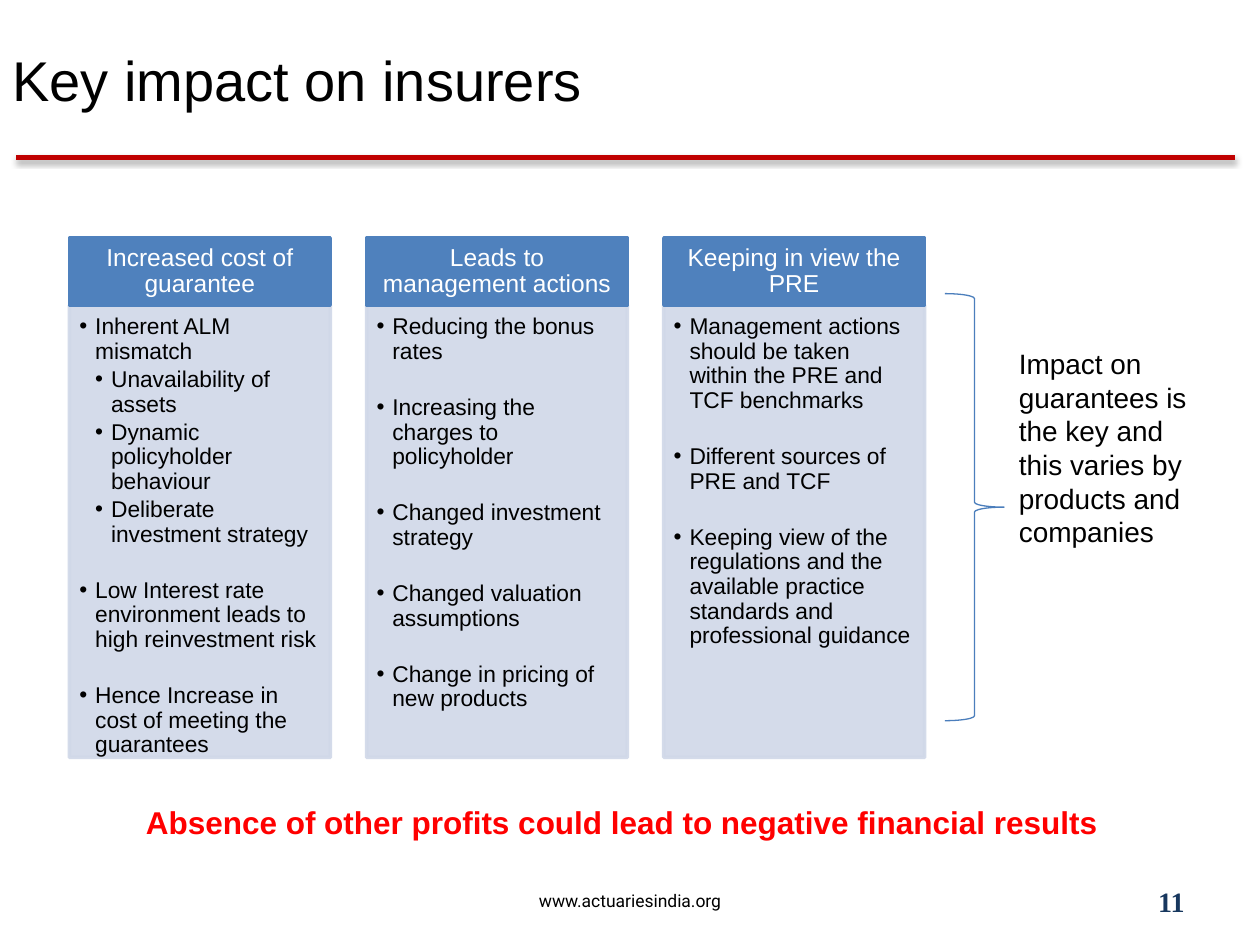
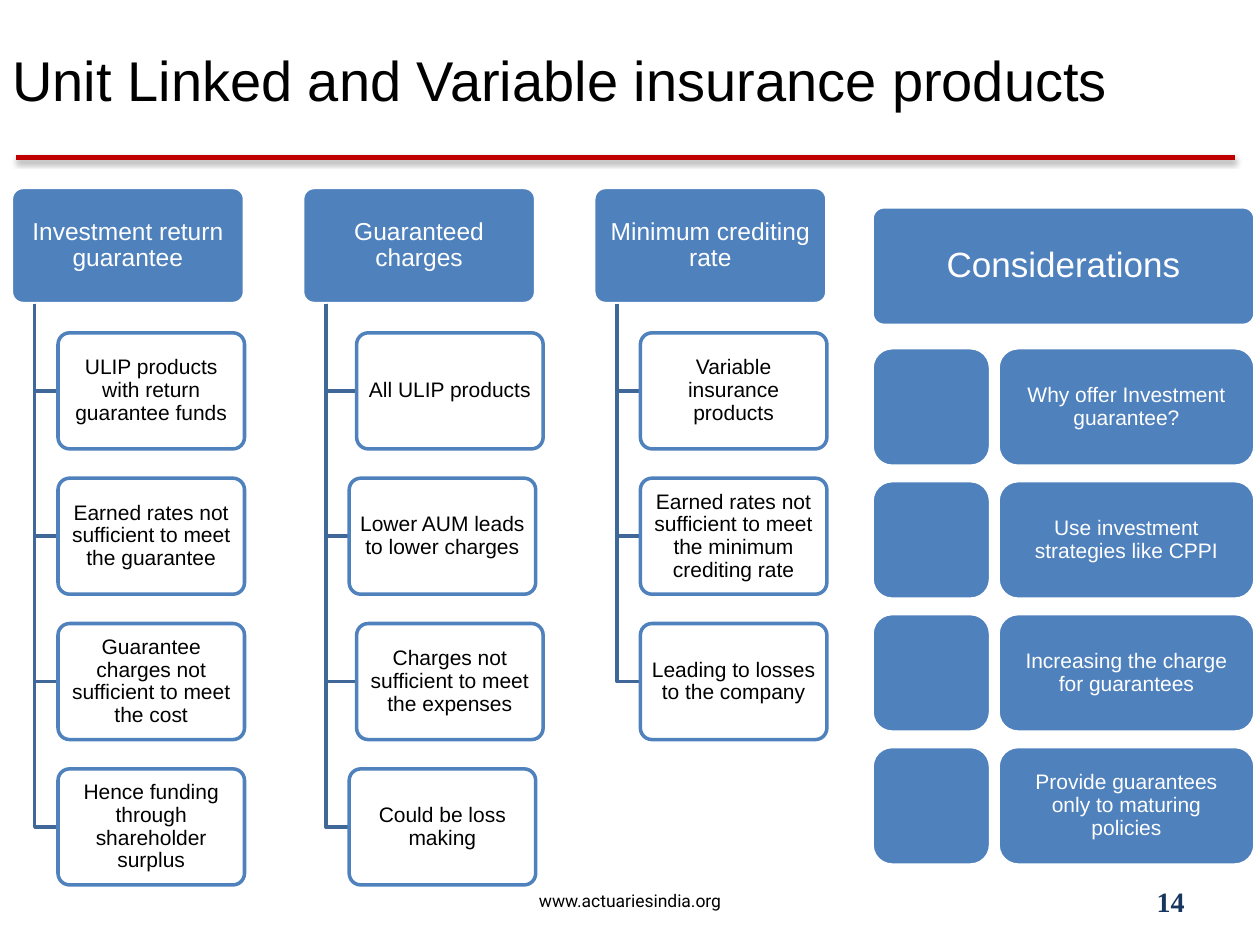
from dataclasses import dataclass
from typing import NamedTuple

from lxml.etree import SubElement
from pptx import Presentation
from pptx.dml.color import RGBColor
from pptx.enum.shapes import MSO_CONNECTOR, MSO_SHAPE
from pptx.enum.text import MSO_ANCHOR, MSO_AUTO_SIZE, PP_ALIGN
from pptx.oxml.ns import qn
from pptx.util import Cm, Pt


@dataclass(frozen=True)
class Theme:
    font: str = "Arial"
    footer_font: str = "Roboto"
    number_font: str = "Times New Roman"
    black: str = "000000"
    white: str = "FFFFFF"
    blue: str = "4F81BD"
    pale_blue: str = "D0D8E8"
    branch_blue: str = "3F6797"
    brace_blue: str = "4B7EBC"
    navy: str = "17375E"
    rule_red: str = "C00000"
    alert_red: str = "FF0000"
    title_size: float = 32
    panel_size: float = 20
    message_size: float = 18
    note_size: float = 16
    head_size: float = 14
    list_size: float = 13
    node_size: float = 12
    footer_size: float = 10


THEME = Theme()
COMPARISON_LAYOUT, TITLE_ONLY_LAYOUT = 4, 5
WIDE_INSETS = (0.25, 0.13, 0.25, 0.13)


class Box(NamedTuple):
    """A rectangle in centimetres."""
    left: float
    top: float
    width: float
    height: float

    def lengths(self):
        return [Cm(value) for value in self]


INSURER_COLUMNS = [
    ("Increased cost of guarantee", [
        (0, "Inherent ALM mismatch"),
        (1, "Unavailability of assets"),
        (1, "Dynamic policyholder behaviour"),
        (1, "Deliberate investment strategy"),
        (0, "Low Interest rate environment leads to high reinvestment risk"),
        (0, "Hence Increase in cost of meeting the guarantees")]),
    ("Leads to management actions", [
        (0, "Reducing the bonus rates"),
        (0, "Increasing the charges to policyholder"),
        (0, "Changed investment strategy"),
        (0, "Changed valuation assumptions"),
        (0, "Change in pricing of new products")]),
    ("Keeping in view the PRE", [
        (0, "Management actions should be taken within the PRE and TCF benchmarks"),
        (0, "Different sources of PRE and TCF"),
        (0, "Keeping view of the regulations and the available practice "
            "standards and professional guidance")]),
]

# Heading, extra indent of every other node, node texts
PRODUCT_TREES = [
    ("Investment return guarantee", 0, [
        "ULIP products with return guarantee funds",
        "Earned rates not sufficient to meet the guarantee",
        "Guarantee charges not sufficient to meet the cost",
        "Hence funding through shareholder surplus"]),
    ("Guaranteed charges", 0.15, [
        "All ULIP products",
        "Lower AUM leads to lower charges",
        "Charges not sufficient to meet the expenses",
        "Could be loss making"]),
    ("Minimum crediting rate", 0, [
        "Variable insurance products",
        "Earned rates not sufficient to meet the minimum crediting rate",
        "Leading to losses to the company"]),
]

CONSIDERATIONS = [
    "Why offer Investment guarantee?",
    "Use investment strategies like CPPI",
    "Increasing the charge for guarantees",
    "Provide guarantees only to maturing policies",
]


def rgb(color):
    return RGBColor.from_string(color)


def style_runs(para, size, color, font=THEME.font, bold=False):
    for span in para.runs:
        span.font.size = Pt(size)
        span.font.name = font
        span.font.bold = bold
        span.font.color.rgb = rgb(color)


def set_frame(frame, anchor, insets=WIDE_INSETS):
    frame.word_wrap = True
    frame.auto_size = MSO_AUTO_SIZE.NONE
    frame.vertical_anchor = anchor
    (frame.margin_left, frame.margin_top,
     frame.margin_right, frame.margin_bottom) = [Cm(inset) for inset in insets]


def set_line(shape, color, width):
    shape.line.color.rgb = rgb(color)
    shape.line.width = Pt(width)


def move(shape, box):
    shape.left, shape.top, shape.width, shape.height = box.lengths()


def make_translucent(shape, percent):
    for color in shape._element.spPr.iter(qn("a:srgbClr")):
        SubElement(color, qn("a:alpha"), val=str(percent * 1000))


def add_label(page, box, text, size, color, anchor=MSO_ANCHOR.MIDDLE,
              align=PP_ALIGN.LEFT, font=THEME.font, bold=False):
    label = page.shapes.add_textbox(*box.lengths())
    set_frame(label.text_frame, anchor)
    label.text_frame.text = text
    para = label.text_frame.paragraphs[0]
    para.alignment = align
    style_runs(para, size, color, font, bold)


def add_tile(page, box, text="", size=THEME.node_size, color=THEME.white,
             fill=THEME.blue, line=THEME.white, rounding=0.1,
             insets=(0.08, 0.05, 0.08, 0.05)):
    """Add a filled tile with centred text; a rounding of 0 gives square corners."""
    kind = MSO_SHAPE.ROUNDED_RECTANGLE if rounding else MSO_SHAPE.RECTANGLE
    tile = page.shapes.add_shape(kind, *box.lengths())
    if rounding:
        tile.adjustments[0] = rounding
    tile.shadow.inherit = False
    tile.fill.solid()
    tile.fill.fore_color.rgb = rgb(fill)
    set_line(tile, line, 2)
    if text:
        set_frame(tile.text_frame, MSO_ANCHOR.MIDDLE, insets)
        tile.text_frame.text = text
        para = tile.text_frame.paragraphs[0]
        para.alignment = PP_ALIGN.CENTER
        para.line_spacing = 0.9
        style_runs(para, size, color)


def add_title_rule(page):
    rule = page.shapes.add_connector(
        MSO_CONNECTOR.STRAIGHT, Cm(0.33), Cm(3.18), Cm(24.89), Cm(3.18))
    set_line(rule, THEME.rule_red, 3)
    effects = SubElement(rule._element.spPr, qn("a:effectLst"))
    shadow = SubElement(effects, qn("a:outerShdw"), blurRad="40000",
                        dist="20000", dir="5400000", rotWithShape="0")
    color = SubElement(shadow, qn("a:srgbClr"), val=THEME.black)
    SubElement(color, qn("a:alpha"), val="38000")


def add_page(deck, layout, title, number):
    """Add a slide with the title, rule, footer and number that all slides share."""
    page = deck.slides.add_slide(deck.slide_layouts[layout])
    heading = page.shapes.title
    move(heading, Box(0, 0, 22.86, 3.18))
    set_frame(heading.text_frame, MSO_ANCHOR.MIDDLE)
    heading.text_frame.text = title
    para = heading.text_frame.paragraphs[0]
    para.alignment = PP_ALIGN.LEFT
    style_runs(para, THEME.title_size, THEME.black)
    add_title_rule(page)
    add_label(page, Box(0, 17.65, 25.4, 1.02), "www.actuariesindia.org",
              THEME.footer_size, THEME.black, align=PP_ALIGN.CENTER,
              font=THEME.footer_font)
    add_label(page, Box(18.21, 17.65, 5.92, 1.02), str(number), THEME.note_size,
              THEME.navy, align=PP_ALIGN.RIGHT, font=THEME.number_font, bold=True)
    return page


def fill_list(body, box, items):
    """Turn a body placeholder into a pale panel with a two-level bullet list."""
    move(body, box)
    body.fill.solid()
    body.fill.fore_color.rgb = rgb(THEME.pale_blue)
    set_line(body, THEME.pale_blue, 2)
    make_translucent(body, 90)
    set_frame(body.text_frame, MSO_ANCHOR.TOP, (0.2, 0.2, 0.25, 0.28))
    body.text_frame.text = "\n".join(text for _, text in items)
    next_levels = [level for level, _ in items[1:]] + [1]
    for para, (level, _), next_level in zip(body.text_frame.paragraphs, items, next_levels):
        para.level = level
        properties = para._p.get_or_add_pPr()
        properties.set("marL", str(Cm(0.32 * (level + 1))))
        properties.set("indent", str(-Cm(0.32)))
        SubElement(properties, qn("a:buChar"), char="•")
        para.alignment = PP_ALIGN.LEFT
        para.line_spacing = 0.9
        para.space_before = Pt(0)
        para.space_after = Pt(2 if next_level else 18)
        style_runs(para, THEME.list_size, THEME.black)


def add_insurer_column(page, body, box, heading, items):
    head_height = 1.35
    add_tile(page, box._replace(height=head_height), heading, THEME.head_size,
             line=THEME.blue, rounding=0, insets=(0.28, 0.16, 0.28, 0.16))
    fill_list(body, Box(box.left, box.top + head_height, box.width,
                        box.height - head_height), items)


def add_brace_note(page, box, text):
    brace_width = 1.19
    brace = page.shapes.add_shape(
        MSO_SHAPE.RIGHT_BRACE, *box._replace(width=brace_width).lengths())
    brace.shadow.inherit = False
    brace.fill.background()
    set_line(brace, THEME.brace_blue, 0.75)
    note = Box(box.left + brace_width + 0.05, box.top + 0.94,
               box.width - brace_width - 0.05, 4.37)
    add_label(page, note, text, THEME.note_size, THEME.black, MSO_ANCHOR.TOP)


def fill_message(body, box, text):
    move(body, box)
    set_frame(body.text_frame, MSO_ANCHOR.TOP)
    body.text_frame.text = text
    para = body.text_frame.paragraphs[0]
    para.space_before = Pt(0)
    style_runs(para, THEME.message_size, THEME.alert_red, bold=True)


def build_insurers_slide(deck):
    page = add_page(deck, COMPARISON_LAYOUT, "Key impact on insurers", 11)
    message, *bodies = [holder for holder in page.placeholders
                        if holder.placeholder_format.idx]
    for index, (body, column) in enumerate(zip(bodies, INSURER_COLUMNS)):
        add_insurer_column(page, body, Box(1.4 + 5.99 * index, 4.8, 5.26, 10.47), *column)
    add_brace_note(page, Box(19.05, 5.92, 5.33, 8.61),
                   "Impact on guarantees is the key and this varies by "
                   "products and companies")
    fill_message(message, Box(2.69, 16.05, 20.4, 1.07),
                 "Absence of other profits could lead to negative financial results")


def add_branch(page, left, top, right, bottom):
    """Draw an elbow going down from the heading and right to a node."""
    builder = page.shapes.build_freeform(Cm(left), Cm(top))
    builder.add_line_segments(
        [(Cm(left), Cm(bottom)), (Cm(right), Cm(bottom))], close=False)
    branch = builder.convert_to_shape()
    branch.shadow.inherit = False
    branch.fill.background()
    set_line(branch, THEME.branch_blue, 2)


def add_tree(page, box, heading, stagger, nodes):
    tile_height, row_pitch = 2.34, 2.93
    add_tile(page, box._replace(height=tile_height), heading, THEME.head_size)
    for row, text in enumerate(nodes):
        shift = 0 if row % 2 else stagger
        node = Box(box.left + 0.94 + shift, box.top + row_pitch * (row + 1),
                   box.width - 0.94, tile_height)
        add_branch(page, box.left + 0.47, box.top + tile_height,
                   node.left, node.top + tile_height / 2)
        add_tile(page, node, text, color=THEME.black, fill=THEME.white, line=THEME.blue)


def add_considerations(page, box, heading, items):
    side, row_pitch, text_offset = 2.39, 2.68, 2.54
    add_tile(page, box._replace(height=side), heading, THEME.panel_size)
    for row, text in enumerate(items):
        marker = Box(box.left, box.top + 2.84 + row_pitch * row, side, side)
        add_tile(page, marker, rounding=0.17)
        add_tile(page, marker._replace(left=box.left + text_offset,
                                       width=box.width - text_offset),
                 text, rounding=0.17, insets=(0.23,) * 4)


def build_products_slide(deck):
    page = add_page(deck, TITLE_ONLY_LAYOUT,
                    "Unit Linked and Variable insurance products", 14)
    for index, tree in enumerate(PRODUCT_TREES):
        add_tree(page, Box(0.23 + 5.87 * index, 3.78, 4.7, 14.06), *tree)
    add_considerations(page, Box(17.58, 4.17, 7.72, 13.28),
                       "Considerations", CONSIDERATIONS)


def main():
    deck = Presentation()
    deck.slide_width, deck.slide_height = Cm(25.4), Cm(19.05)
    build_insurers_slide(deck)
    build_products_slide(deck)
    deck.save("out.pptx")


if __name__ == "__main__":
    main()
